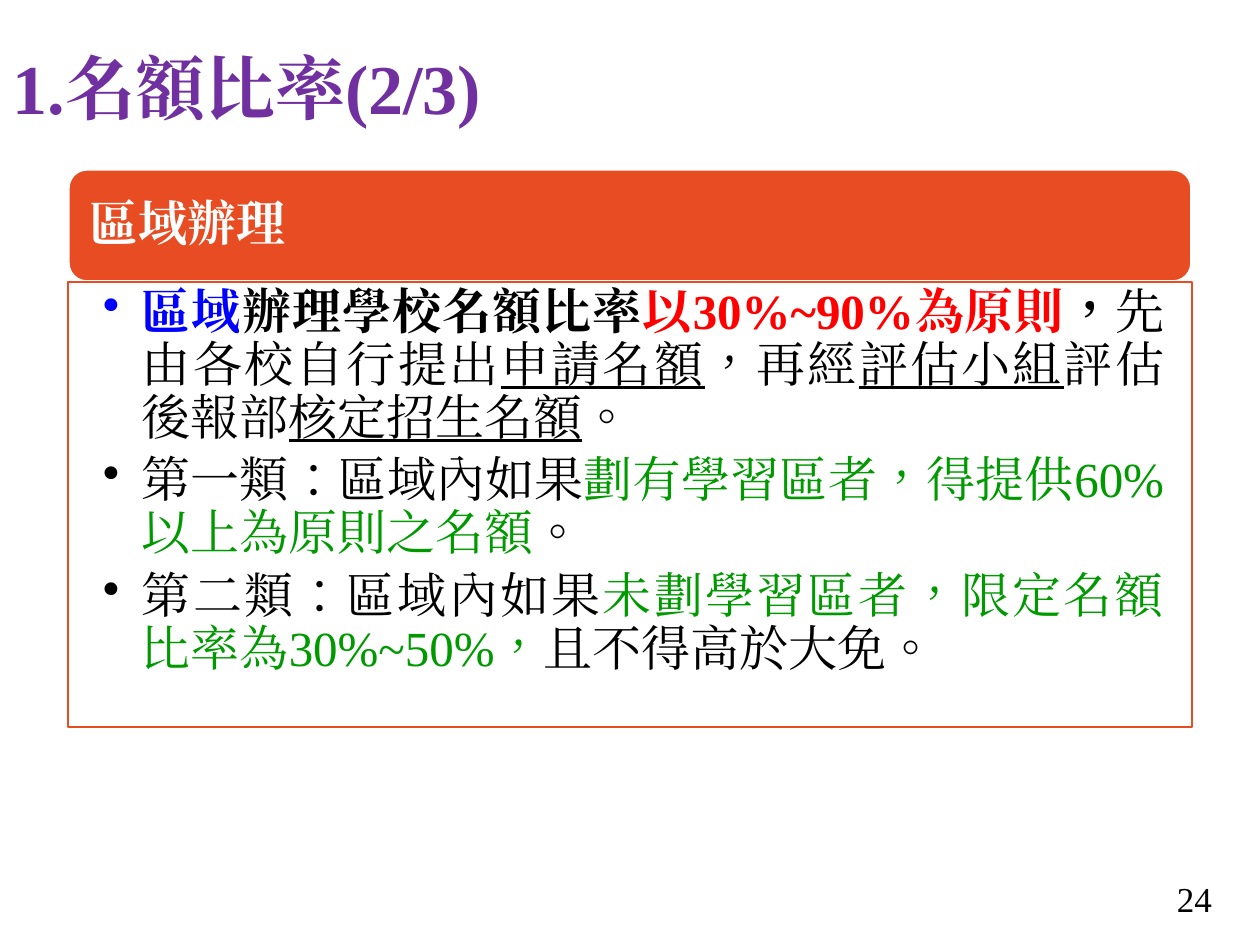
"""Build the slide on quota ratios for schools that recruit by region."""
from dataclasses import dataclass

from lxml.etree import SubElement
from pptx import Presentation
from pptx.dml.color import RGBColor
from pptx.enum.shapes import MSO_SHAPE
from pptx.enum.text import MSO_ANCHOR, PP_ALIGN
from pptx.oxml.ns import qn
from pptx.util import Pt

EMU_PER_PX = 914400 / 126


@dataclass(frozen=True)
class Theme:
    font: str = "Times New Roman"
    title: str = "7030A0"
    accent: str = "E84C22"
    white: str = "FFFFFF"
    ink: str = "000000"
    region: str = "0000FF"
    rule: str = "FF0000"
    category: str = "009900"
    title_size: int = 40
    body_size: int = 28
    number_size: int = 20


THEME = Theme()

TITLE = "1.名額比率(2/3)"
HEADING = "區域辦理"
PAGE_NUMBER = "24"
POINTS = [
    [
        ("區域", THEME.region, "b"),
        ("辦理學校名額比率", THEME.ink, "b"),
        ("以30%~90%為原則", THEME.rule, "b"),
        ("，", THEME.ink, "b"),
        ("先由各校自行提出", THEME.ink, ""),
        ("申請名額", THEME.ink, "u"),
        ("，再經", THEME.ink, ""),
        ("評估小組", THEME.ink, "u"),
        ("評估後報部", THEME.ink, ""),
        ("核定招生名額", THEME.ink, "u"),
        ("。", THEME.ink, ""),
    ],
    [
        ("第一類：區域內如果", THEME.ink, ""),
        ("劃有學習區者，得提供60%以上為原則之名額", THEME.category, ""),
        ("。", THEME.ink, ""),
    ],
    [
        ("第二類：區域內如果", THEME.ink, ""),
        ("未劃學習區者，限定名額比率為30%~50%，", THEME.category, ""),
        ("且不得高於大免。", THEME.ink, ""),
    ],
]

LEFT, WIDTH = 68, 1124
HEADING_TOP, HEADING_HEIGHT, PANEL_HEIGHT = 169, 113, 445
BULLET_INDENT = 39


def px(length):
    return round(length * EMU_PER_PX)


def rgb(colour):
    return RGBColor.from_string(colour)


def set_frame(frame, anchor, insets=(13, 6, 13, 6)):
    frame.word_wrap = True
    frame.vertical_anchor = anchor
    frame.margin_left, frame.margin_top, frame.margin_right, frame.margin_bottom = map(px, insets)
    return frame


def add_text(slide, box, anchor=MSO_ANCHOR.MIDDLE):
    return set_frame(slide.shapes.add_textbox(*map(px, box)).text_frame, anchor)


def add_block(slide, preset, box, line_colour, line_width):
    block = slide.shapes.add_shape(preset, *map(px, box))
    block.shadow.inherit = False
    block.line.color.rgb = rgb(line_colour)
    block.line.width = Pt(line_width)
    return block


def add_runs(paragraph, runs, size, align=PP_ALIGN.LEFT, spacing=0.9, after=0):
    paragraph.alignment = align
    paragraph.line_spacing = spacing
    paragraph.space_after = Pt(after)
    for text, colour, style in runs:
        run = paragraph.add_run()
        run.text = text
        run.font.name = THEME.font
        run.font.size = Pt(size)
        run.font.color.rgb = rgb(colour)
        run.font.bold = "b" in style
        run.font.underline = "u" in style
        properties = run._r.get_or_add_rPr()
        properties.set("lang", "zh-TW")
        SubElement(properties, qn("a:ea")).set("typeface", THEME.font)


def add_bullet(paragraph):
    paragraph.level = 1
    properties = paragraph._p.get_or_add_pPr()
    properties.set("marL", str(px(BULLET_INDENT)))
    properties.set("indent", str(-px(BULLET_INDENT)))
    SubElement(properties, qn("a:buChar")).set("char", "•")


def main():
    presentation = Presentation()
    presentation.slide_width, presentation.slide_height = px(1260), px(945)
    slide = presentation.slides.add_slide(presentation.slide_layouts[6])

    heading = add_block(slide, MSO_SHAPE.ROUNDED_RECTANGLE,
                        (LEFT, HEADING_TOP, WIDTH, HEADING_HEIGHT), THEME.white, 2)
    heading.fill.solid()
    heading.fill.fore_color.rgb = rgb(THEME.accent)
    heading_frame = set_frame(heading.text_frame, MSO_ANCHOR.MIDDLE, (16, 15, 16, 15))
    add_runs(heading_frame.paragraphs[0], [(HEADING, THEME.white, "b")],
             THEME.body_size, after=0.35 * THEME.body_size)

    panel = add_block(slide, MSO_SHAPE.RECTANGLE,
                      (LEFT, HEADING_TOP + HEADING_HEIGHT, WIDTH, PANEL_HEIGHT),
                      THEME.accent, 0.75)
    panel.fill.background()
    panel_frame = set_frame(panel.text_frame, MSO_ANCHOR.TOP, (35, 5, 28, 5))
    for index, point in enumerate(POINTS):
        paragraph = panel_frame.add_paragraph() if index else panel_frame.paragraphs[0]
        add_runs(paragraph, point, THEME.body_size, PP_ALIGN.JUSTIFY,
                 after=0.2 * THEME.body_size)
        add_bullet(paragraph)

    title_frame = add_text(slide, (0, 0, 1260, 183))
    add_runs(title_frame.paragraphs[0], [(TITLE, THEME.title, "b")], THEME.title_size)

    number_frame = add_text(slide, (941, 873, 284, 50))
    add_runs(number_frame.paragraphs[0], [(PAGE_NUMBER, THEME.ink, "")],
             THEME.number_size, PP_ALIGN.RIGHT, spacing=1.0)

    presentation.save("out.pptx")


if __name__ == "__main__":
    main()
